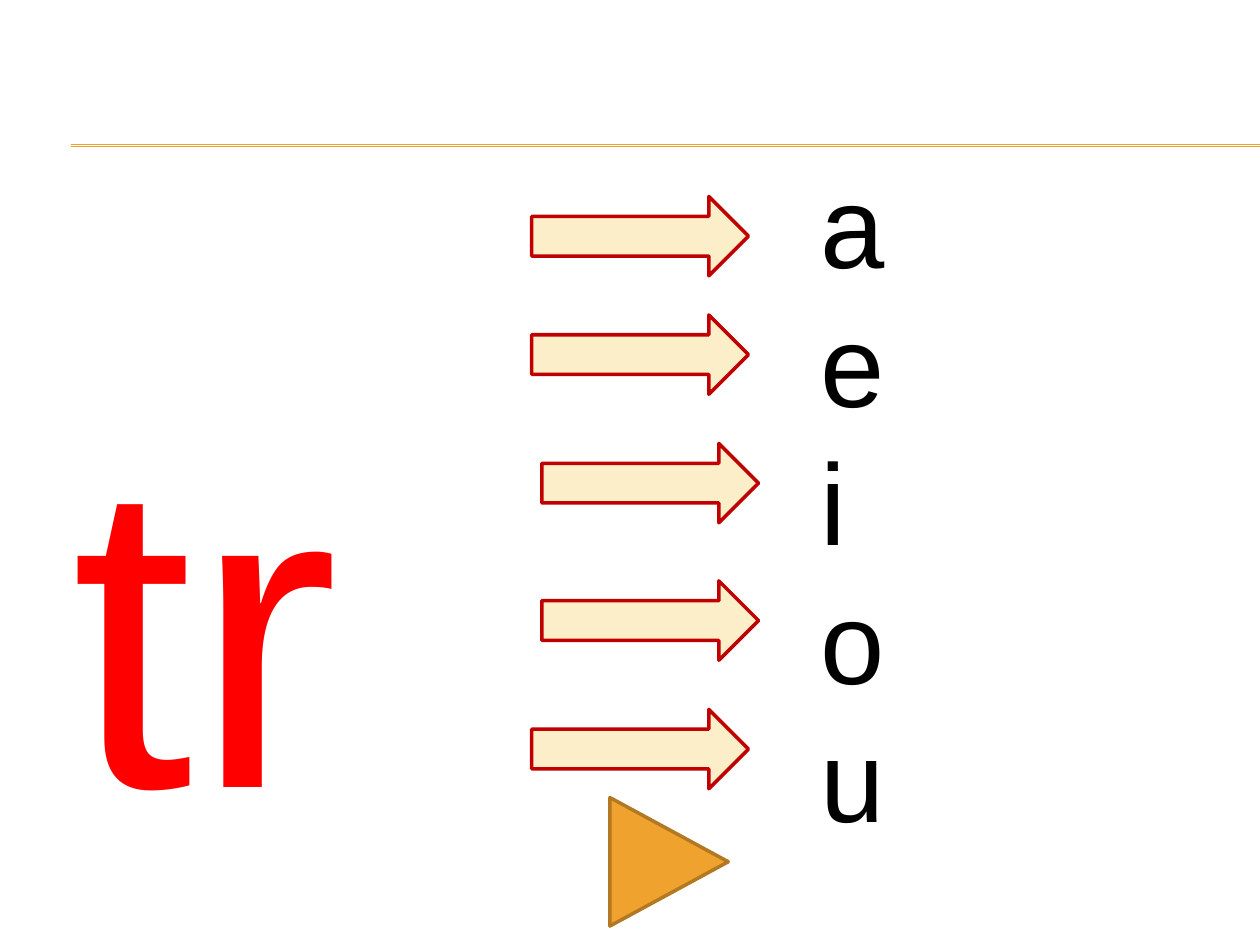
from dataclasses import dataclass

from lxml.etree import SubElement
from pptx import Presentation
from pptx.dml.color import RGBColor
from pptx.enum.shapes import MSO_CONNECTOR, MSO_SHAPE
from pptx.enum.text import MSO_ANCHOR, MSO_AUTO_SIZE, PP_ALIGN
from pptx.oxml.ns import qn
from pptx.util import Inches, Pt

COLORS = {
    "amber": "F0A22E", "brown": "B27822", "cream": "FBEEC9",
    "dark_red": "C00000", "red": "FF0000", "black": "000000",
}
FONT = "Arial"
WIDTH, HEIGHT = Inches(10), Inches(7.5)


@dataclass
class Box:
    """Position and size in percent of the slide's width and height."""
    left: float
    top: float
    width: float
    height: float

    def lengths(self) -> tuple:
        return (x_share(self.left), y_share(self.top),
                x_share(self.width), y_share(self.height))


@dataclass
class VowelRow:
    vowel: str
    arrow_left: float
    arrow_top: float


ROWS = [
    VowelRow("a", 42.2, 20.8),
    VowelRow("e", 42.2, 33.33),
    VowelRow("i", 43, 46.93),
    VowelRow("o", 43, 61.47),
    VowelRow("u", 42.2, 75.07),
]


def x_share(percent: float) -> int:
    return int(WIDTH * percent / 100)


def y_share(percent: float) -> int:
    return int(HEIGHT * percent / 100)


def rgb(name: str) -> RGBColor:
    return RGBColor.from_string(COLORS[name])


def add_run(p, text: str, size: float, color: str) -> None:
    r = p.add_run()
    r.text = text
    r.font.name = FONT
    r.font.size = Pt(size)
    r.font.color.rgb = rgb(color)


def add_rule(slide, top: float) -> None:
    y = y_share(top)
    line = slide.shapes.add_connector(
        MSO_CONNECTOR.STRAIGHT, x_share(5.6), y, WIDTH, y)
    line.line.color.rgb = rgb("amber")
    line.line.width = Pt(0.75)
    SubElement(line.element.spPr, qn("a:effectLst"))


def add_figure(slide, kind: MSO_SHAPE, box: Box, fill: str, outline: str,
               rotation: float = 0) -> None:
    sp = slide.shapes.add_shape(kind, *box.lengths())
    sp.shadow.inherit = False
    sp.fill.solid()
    sp.fill.fore_color.rgb = rgb(fill)
    sp.line.color.rgb = rgb(outline)
    sp.line.width = Pt(2)
    sp.rotation = rotation


def fill_consonants(body) -> None:
    body.left, body.top, body.width, body.height = Box(
        4.7, 15.6, 34.9, 68.8).lengths()
    tf = body.text_frame
    tf.auto_size = MSO_AUTO_SIZE.NONE
    tf.vertical_anchor = MSO_ANCHOR.TOP
    tf.margin_top = Inches(1.61)
    p = tf.paragraphs[0]
    p.alignment = PP_ALIGN.LEFT
    p.space_before = Pt(0)
    pPr = p._p.get_or_add_pPr()
    pPr.set("marL", "0")
    pPr.set("indent", "0")
    SubElement(pPr, qn("a:buNone"))
    add_run(p, "tr", 250, "red")


def add_vowels(slide) -> None:
    tf = slide.shapes.add_textbox(
        *Box(64.1, 15.6, 18.8, 75.33).lengths()).text_frame
    tf.word_wrap = True
    for i, row in enumerate(ROWS):
        p = tf.add_paragraph() if i else tf.paragraphs[0]
        p.line_spacing = Pt(79.1)
        add_run(p, row.vowel, 66, "black")


def main() -> None:
    prs = Presentation()
    prs.slide_width, prs.slide_height = WIDTH, HEIGHT
    slide = prs.slides.add_slide(prs.slide_layouts[1])

    # The slide shows no title
    title = slide.shapes.title.element
    title.getparent().remove(title)

    # Double rule at the top
    for top in (15.33, 15.47):
        add_rule(slide, top)

    # Consonants, arrows and vowels
    fill_consonants(slide.placeholders[1])
    for row in ROWS:
        add_figure(slide, MSO_SHAPE.RIGHT_ARROW,
                   Box(row.arrow_left, row.arrow_top, 17.2, 8.4),
                   "cream", "dark_red")
    add_vowels(slide)

    # Triangle pointing onward
    add_figure(slide, MSO_SHAPE.ISOSCELES_TRIANGLE,
               Box(48, 84.93, 10.2, 12.53), "amber", "brown", rotation=90)

    prs.save("out.pptx")


if __name__ == "__main__":
    main()
